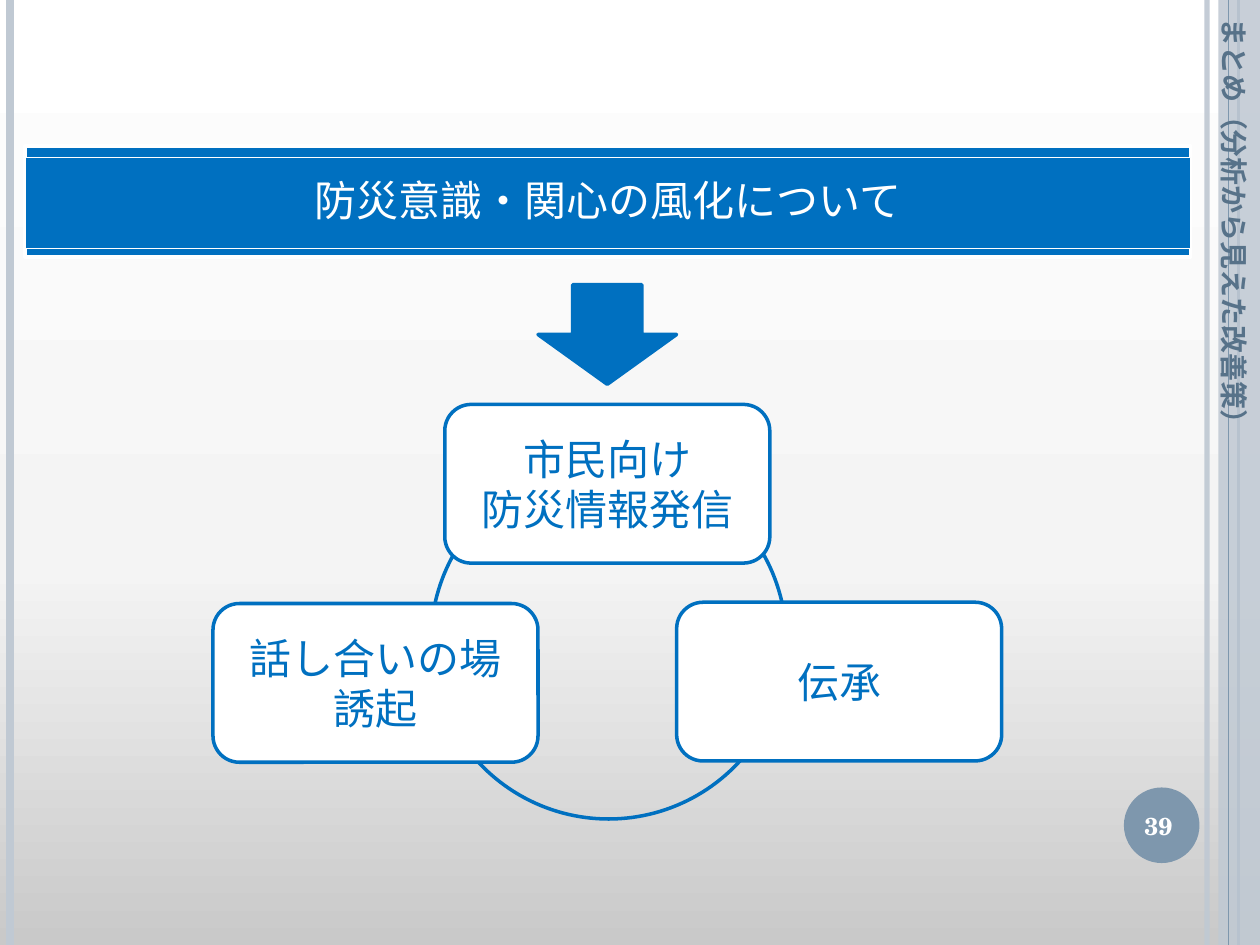
import copy

import pptx
import pptx.util
import pptx.dml.color
import pptx.enum.shapes
import pptx.enum.text
import pptx.oxml.ns
import pptx.oxml.xmlchemy

Inches = pptx.util.Inches
Pt = pptx.util.Pt
KIND = pptx.enum.shapes.MSO_SHAPE
ALIGN = pptx.enum.text.PP_ALIGN
ANCHOR = pptx.enum.text.MSO_ANCHOR
qn = pptx.oxml.ns.qn
make_node = pptx.oxml.xmlchemy.OxmlElement

SANS = "Noto Sans CJK JP"
SERIF = "TeX Gyre Schola"
COLORS = {
    "blue": "0070C0",
    "white": "FFFFFF",
    "pale": "C0C9D3",
    "slate": "7E97AD",
    "title": "577289",
    "low": "C9C9C9",
    "mid": "F4F4F4",
}
STOPS = [(0, "low"), (0.4, "mid"), (1, "white")]


def get_rgb(name):
    return pptx.dml.color.RGBColor.from_string(COLORS[name])


def set_alpha(item, value):
    """Make the solid colour inside an XML element partly transparent."""
    color = item.find(".//" + qn("a:srgbClr"))
    alpha = make_node("a:alpha")
    alpha.set("val", str(value * 1000))
    color.append(alpha)


def paint_back(slide):
    fill = slide.background.fill
    fill.gradient()
    fill.gradient_angle = 90
    stops = slide.element.find(".//" + qn("a:gsLst"))
    stops.insert(1, copy.deepcopy(stops[0]))
    for stop, (place, color) in zip(fill.gradient_stops, STOPS):
        stop.position = place
        stop.color.rgb = get_rgb(color)


def add_rule(slide, left, color, width, alpha=None):
    """Draw a vertical line over the full slide height."""
    rule = slide.shapes.add_connector(
        pptx.enum.shapes.MSO_CONNECTOR.STRAIGHT,
        Inches(left), Inches(0), Inches(left), Inches(7.5))
    rule.line.color.rgb = get_rgb(color)
    rule.line.width = Pt(width)
    props = rule.element.spPr
    if alpha:
        set_alpha(props, alpha)
    props.append(make_node("a:effectLst"))


def add_form(slide, kind, box, fill=None, line=None, width=2):
    form = slide.shapes.add_shape(kind, *map(Inches, box))
    form.shadow.inherit = False
    if fill:
        form.fill.solid()
        form.fill.fore_color.rgb = get_rgb(fill)
    else:
        form.fill.background()
    if line:
        form.line.color.rgb = get_rgb(line)
        form.line.width = Pt(width)
    else:
        form.line.fill.background()
    return form


def write(shape, lines, size, color, font=SANS, bold=False,
          align=ALIGN.CENTER, anchor=ANCHOR.MIDDLE):
    frame = shape.text_frame
    frame.word_wrap = True
    frame.vertical_anchor = anchor
    for index, line in enumerate(lines):
        para = frame.add_paragraph() if index else frame.paragraphs[0]
        para.alignment = align
        run = para.add_run()
        run.text = line
        run.font.size = Pt(size)
        run.font.bold = bold
        run.font.name = font
        run.font.color.rgb = get_rgb(color)
        asian = make_node("a:ea")
        asian.set("typeface", font)
        run.font._element.append(asian)


def add_frame(slide):
    """Draw the side rules, the right strip and the page number."""
    add_rule(slide, 9.58, "pale", 3, 93)
    add_rule(slide, 0.08, "pale", 4.5)
    add_rule(slide, 9.83, "slate", 1.5)
    strip = add_form(slide, KIND.RECTANGLE, (9.67, 0, 0.33, 7.5), "pale")
    set_alpha(strip.element.spPr, 87)
    add_rule(slide, 9.75, "slate", 0.75)
    add_form(slide, KIND.OVAL, (8.92, 6.25, 0.6, 0.6), "slate")
    page = slide.shapes.add_textbox(*map(Inches, (8.86, 6.27, 0.67, 0.57)))
    write(page, ["39"], 14, "white", SERIF, bold=True)


def add_banner(slide):
    add_form(slide, KIND.RECTANGLE, (0.2, 1.16, 9.25, 0.88), "blue", "white")
    band = add_form(slide, KIND.RECTANGLE, (0.2, 1.25, 9.25, 0.72),
                    "blue", "white", 0.75)
    write(band, ["防災意識・関心の風化について"], 24, "white")
    band.text_frame.paragraphs[0].line_spacing = 0.9


def add_cycle(slide):
    add_form(slide, KIND.OVAL, (3.42, 3.68, 2.82, 2.82), line="blue")
    add_form(slide, KIND.DOWN_ARROW, (4.27, 2.26, 1.1, 0.79), "blue", "blue")
    cards = [
        (3.53, 3.21, ["市民向け", "防災情報発信"]),
        (1.69, 4.79, ["話し合いの場", "誘起"]),
        (5.37, 4.78, ["伝承"]),
    ]
    for left, top, lines in cards:
        card = add_form(slide, KIND.ROUNDED_RECTANGLE,
                        (left, top, 2.58, 1.26), "white", "blue")
        write(card, lines, 24, "blue")


def set_title(slide):
    """Turn the title down the right strip, in front of it."""
    title = slide.shapes.title
    title.left, title.top = Inches(7.5), Inches(2.13)
    title.width, title.height = Inches(4.6), Inches(0.37)
    title.rotation = 90
    write(title, ["まとめ（分析から見えた改善策）"], 16, "title", bold=True,
          align=ALIGN.LEFT, anchor=ANCHOR.TOP)
    title.text_frame.margin_left = Inches(0.13)
    title.text_frame.auto_size = pptx.enum.text.MSO_AUTO_SIZE.NONE
    slide.shapes.element.append(title.element)


def main():
    deck = pptx.Presentation()
    deck.slide_width, deck.slide_height = Inches(10), Inches(7.5)
    slide = deck.slides.add_slide(deck.slide_layouts[5])
    paint_back(slide)
    add_frame(slide)
    add_banner(slide)
    add_cycle(slide)
    set_title(slide)
    deck.save("out.pptx")


if __name__ == "__main__":
    main()
